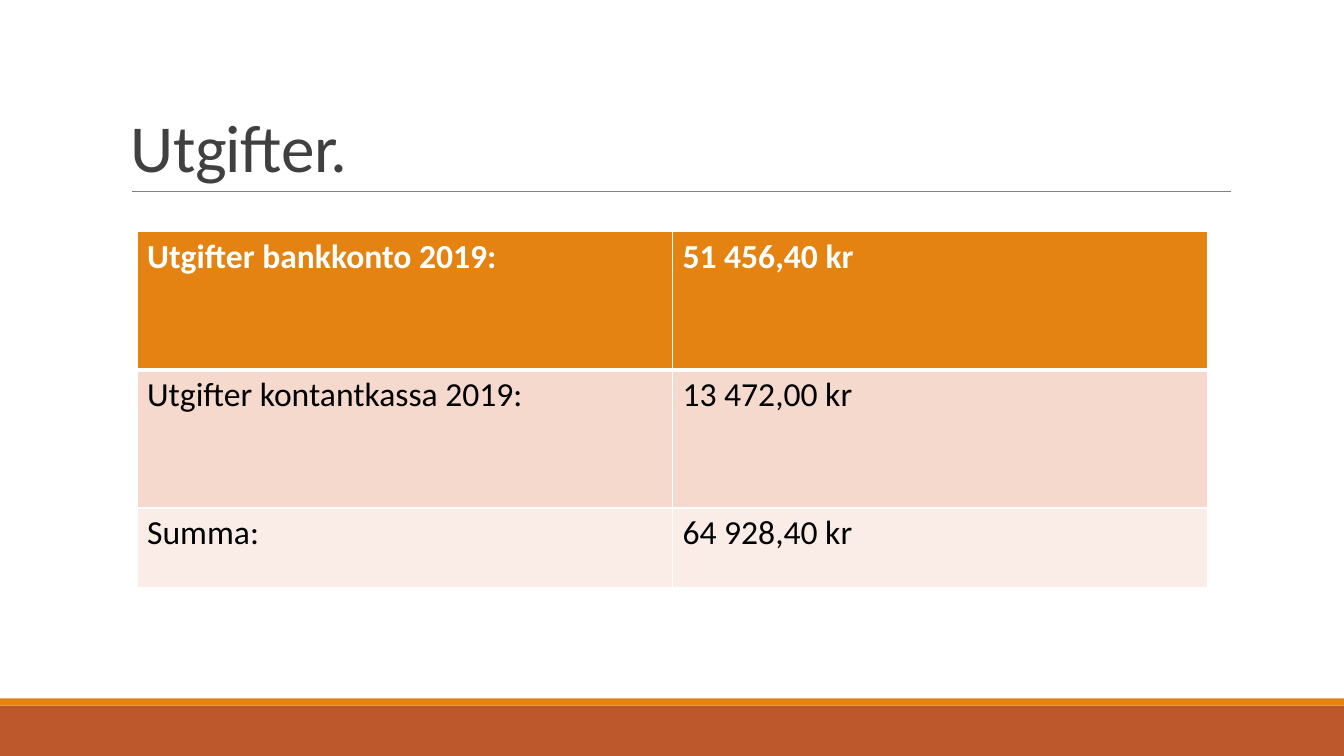
from dataclasses import dataclass

from lxml.etree import SubElement
from pptx import Presentation
from pptx.dml.color import RGBColor
from pptx.enum.shapes import MSO_CONNECTOR, MSO_SHAPE
from pptx.enum.text import MSO_ANCHOR
from pptx.oxml import parse_xml
from pptx.oxml.ns import nsdecls, qn
from pptx.slide import Slide
from pptx.table import _Cell
from pptx.text.text import _Paragraph
from pptx.util import Inches, Pt


@dataclass(frozen=True)
class Theme:
    font: str = "Calibri"
    head: int = 48
    body: int = 24
    white: str = "FFFFFF"
    black: str = "000000"
    gray: str = "404040"
    rule: str = "808080"
    orange: str = "E48312"
    rust: str = "BD582C"
    peach: str = "F5D9CC"
    pale: str = "FAEDE7"


@dataclass(frozen=True)
class Band:
    top: float
    height: float
    color: str


@dataclass(frozen=True)
class Row:
    label: str
    amount: str
    height: float
    fill: str
    ink: str
    bold: bool = False
    under: int = 1


THEME = Theme()
WIDTH = 13.33
BANDS = [Band(7, 0.5, THEME.rust), Band(6.93, 0.07, THEME.orange)]
ROWS = [
    Row("Utgifter bankkonto 2019:", "51 456,40 kr", 1.37,
        THEME.orange, THEME.white, True, 3),
    Row("Utgifter kontantkassa 2019:", "13 472,00 kr", 1.37,
        THEME.peach, THEME.black),
    Row("Summa:", "64 928,40 kr", 0.79, THEME.pale, THEME.black),
]


def style(para: _Paragraph, size: int, color: str, bold: bool = False) -> None:
    font = para.font
    font.name, font.size, font.bold = THEME.font, Pt(size), bold
    font.color.rgb = RGBColor.from_string(color)


def add_band(slide: Slide, band: Band) -> None:
    shape = slide.shapes.add_shape(
        MSO_SHAPE.RECTANGLE, 0, Inches(band.top),
        Inches(WIDTH), Inches(band.height))
    shape.shadow.inherit = False
    shape.fill.solid()
    shape.fill.fore_color.rgb = RGBColor.from_string(band.color)
    shape.line.fill.background()


def add_rule(slide: Slide) -> None:
    line = slide.shapes.add_connector(
        MSO_CONNECTOR.STRAIGHT, Inches(1.31), Inches(1.9),
        Inches(12.21), Inches(1.9))
    line.line.color.rgb = RGBColor.from_string(THEME.rule)
    line.line.width = Pt(0.5)
    SubElement(line._element.spPr, qn("a:effectLst"))


def add_title(slide: Slide, text: str) -> None:
    box = slide.shapes.add_textbox(
        Inches(1.2), Inches(0.31), Inches(11), Inches(1.59))
    frame = box.text_frame
    frame.word_wrap = True
    frame.vertical_anchor = MSO_ANCHOR.BOTTOM
    para = frame.paragraphs[0]
    run = para.add_run()
    run.text = text
    para.line_spacing = 0.85
    style(para, THEME.head, THEME.gray)
    # Tighter letter spacing, in hundredths of a point
    run.font._element.set("spc", "-50")


def set_edges(cell: _Cell, above: int, under: int) -> None:
    props = cell._tc.get_or_add_tcPr()
    widths = {"lnL": 1, "lnR": 1, "lnT": above, "lnB": under}
    for spot, (tag, width) in enumerate(widths.items()):
        props.insert(spot, parse_xml(
            f'<a:{tag} {nsdecls("a")} w="{Pt(width)}"><a:solidFill>'
            f'<a:srgbClr val="{THEME.white}"/></a:solidFill></a:{tag}>'))


def add_costs(slide: Slide, rows: list[Row]) -> None:
    total = sum(row.height for row in rows)
    table = slide.shapes.add_table(
        len(rows), 2, Inches(1.36), Inches(2.3),
        Inches(10.62), Inches(total)).table
    above = 1
    for index, row in enumerate(rows):
        table.rows[index].height = Inches(row.height)
        for col, text in enumerate((row.label, row.amount)):
            cell = table.cell(index, col)
            cell.text = text
            style(cell.text_frame.paragraphs[0], THEME.body, row.ink, row.bold)
            cell.fill.solid()
            cell.fill.fore_color.rgb = RGBColor.from_string(row.fill)
            set_edges(cell, above, row.under)
        above = row.under


def main() -> None:
    deck = Presentation()
    deck.slide_width, deck.slide_height = Inches(WIDTH), Inches(7.5)
    slide = deck.slides.add_slide(deck.slide_layouts[6])
    # Footer bands
    for band in BANDS:
        add_band(slide, band)
    # Title and its rule
    add_rule(slide)
    add_title(slide, "Utgifter.")
    # Expense table
    add_costs(slide, ROWS)
    deck.save("out.pptx")


if __name__ == "__main__":
    main()
